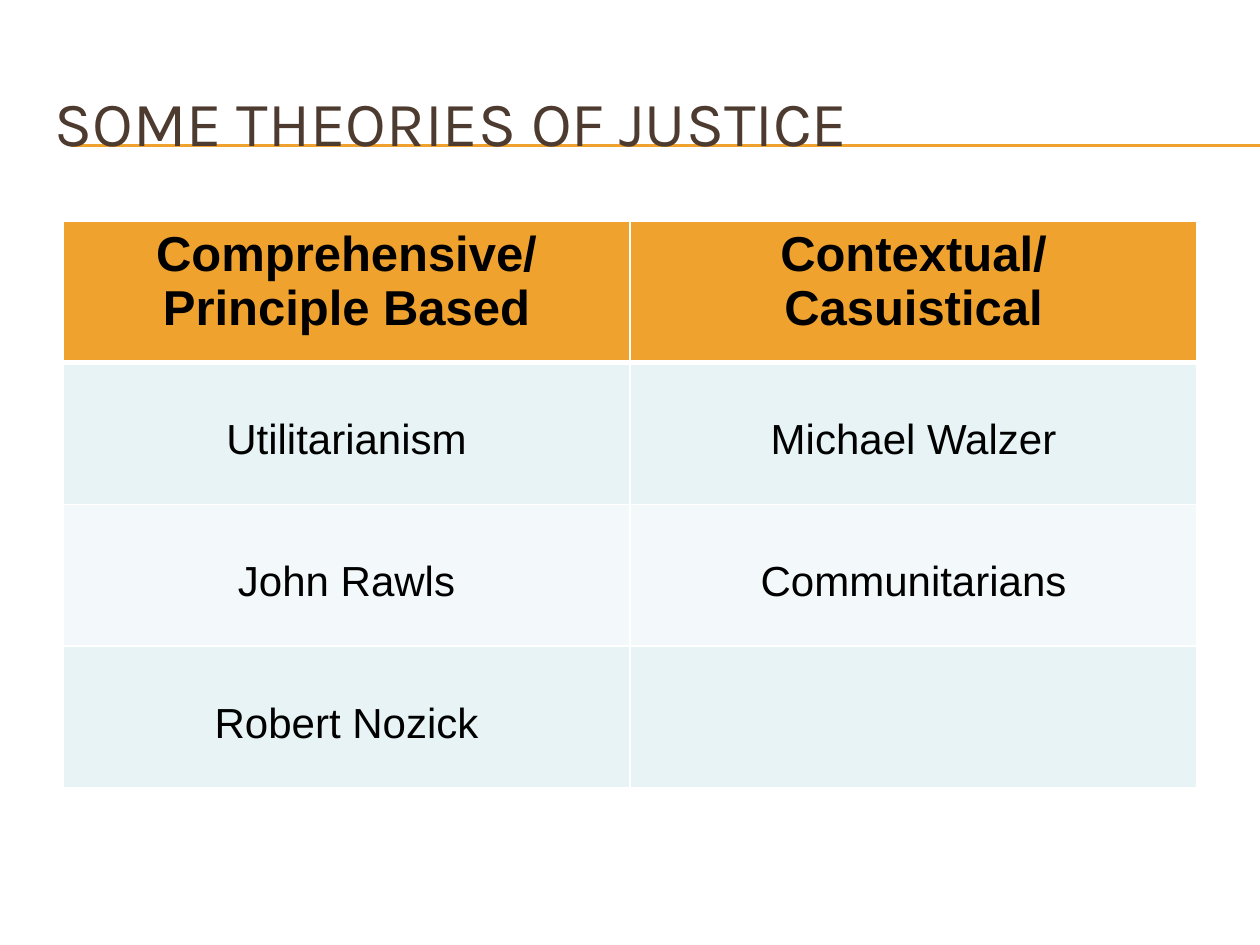
"""Build a slide with a two-column table of theories of justice."""
from lxml import etree
from pptx import Presentation
from pptx.dml.color import RGBColor
from pptx.enum.shapes import MSO_CONNECTOR
from pptx.enum.text import MSO_ANCHOR, PP_ALIGN
from pptx.oxml.ns import qn
from pptx.util import Pt

STRAIGHT = MSO_CONNECTOR.STRAIGHT
MIDDLE = MSO_ANCHOR.MIDDLE
LEFT, CENTER = PP_ALIGN.LEFT, PP_ALIGN.CENTER
EMU_PER_PX = 914400 / 126
COLORS = {
    "accent": "F0A22E",
    "title": "4E3B30",
    "text": "000000",
    "border": "FFFFFF",
    "odd_row": "E7F3F4",
    "even_row": "F3F9FA",
}
ROWS = [
    ("Comprehensive/\nPrinciple Based", "Contextual/\nCasuistical"),
    ("Utilitarianism", "Michael Walzer"),
    ("John Rawls", "Communitarians"),
    ("Robert Nozick", ""),
]
ROW_FILLS = ["accent", "odd_row", "even_row", "odd_row"]


def px(value):
    return round(value * EMU_PER_PX)


def add_border(cell, side, points):
    properties = cell._tc.get_or_add_tcPr()
    line = etree.SubElement(properties, qn(f"a:ln{side}"), w=str(Pt(points)))
    fill = etree.SubElement(line, qn("a:solidFill"))
    etree.SubElement(fill, qn("a:srgbClr"), val=COLORS["border"])


presentation = Presentation()
presentation.slide_width, presentation.slide_height = px(1260), px(945)
slide = presentation.slides.add_slide(presentation.slide_layouts[5])

for y in (145, 146):
    rule = slide.shapes.add_connector(STRAIGHT, px(71), px(y), px(1260), px(y))
    rule.line.color.rgb = RGBColor.from_string(COLORS["accent"])
    rule.line.width = Pt(0.75)
    etree.SubElement(rule._element.spPr, qn("a:effectLst"))

title = slide.shapes.title
slide.shapes._spTree.append(title._element)
title.left, title.top, title.width, title.height = px(42), px(63), px(1197), px(116)
title.text_frame.text = "SOME THEORIES OF JUSTICE"
title.text_frame.vertical_anchor = MIDDLE
paragraph = title.text_frame.paragraphs[0]
paragraph.alignment = LEFT
paragraph.font.name = "Karla"
paragraph.font.size = Pt(36)
paragraph.font.color.rgb = RGBColor.from_string(COLORS["title"])

table_shape = slide.shapes.add_table(len(ROWS), 2, px(63), px(221), px(1134), px(567))
table = table_shape.table
for row_index, (texts, fill_name) in enumerate(zip(ROWS, ROW_FILLS)):
    is_header = row_index == 0
    for column_index, text in enumerate(texts):
        cell = table.cell(row_index, column_index)
        add_border(cell, "L", 1)
        add_border(cell, "R", 1)
        add_border(cell, "T", 3 if row_index == 1 else 1)
        add_border(cell, "B", 3 if is_header else 1)
        cell.fill.solid()
        cell.fill.fore_color.rgb = RGBColor.from_string(COLORS[fill_name])
        cell.margin_top = px(6 if is_header else 54)
        cell.text = text
        for paragraph in cell.text_frame.paragraphs:
            paragraph.alignment = CENTER
            paragraph.font.name = "Arial"
            paragraph.font.size = Pt(28 if is_header else 24)
            paragraph.font.bold = is_header
            paragraph.font.color.rgb = RGBColor.from_string(COLORS["text"])

presentation.save("out.pptx")
